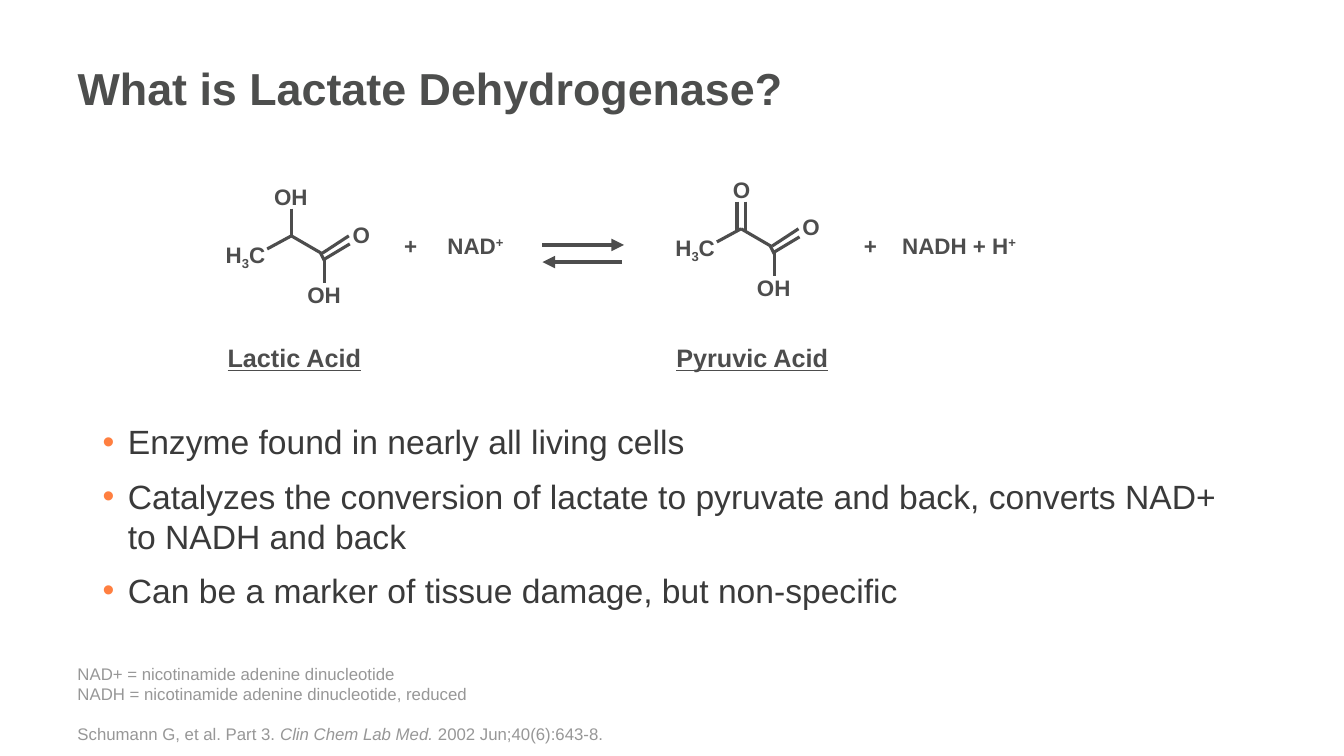
from dataclasses import dataclass
from typing import NamedTuple

from lxml.etree import SubElement
from pptx import Presentation
from pptx.dml.color import RGBColor
from pptx.enum.shapes import MSO_CONNECTOR as Connector
from pptx.enum.text import MSO_ANCHOR as Anchor, PP_ALIGN as Align
from pptx.oxml.ns import qn
from pptx.util import Inches, Pt


@dataclass(frozen=True)
class Theme:
    font: str = "Arial"
    title: RGBColor = RGBColor(0x4D, 0x4E, 0x4D)
    chemistry: RGBColor = RGBColor(0x4D, 0x4D, 0x4D)
    body: RGBColor = RGBColor(0x3A, 0x3A, 0x3A)
    note: RGBColor = RGBColor(0x97, 0x97, 0x97)
    bullet: str = "FF7F40"
    title_size: int = 32
    body_size: int = 24
    name_size: int = 18
    atom_size: int = 16
    note_size: int = 12
    bond_width: float = 2.25
    arrow_width: float = 3


class Piece(NamedTuple):
    text: str
    baseline: int = 0
    italic: bool = False


class Label(NamedTuple):
    pieces: list[Piece]
    left: float
    top: float
    width: float


class Line(NamedTuple):
    x1: float
    y1: float
    x2: float
    y2: float


class Molecule(NamedTuple):
    """A three-carbon acid, placed by its middle carbon."""
    name: Label
    x: float
    y: float
    bonds: list[Line]
    group: Label


THEME = Theme()
ATOM_HEIGHT = 0.37
NAME_HEIGHT = 0.4

# Offsets from the middle carbon
ACID_BONDS = [
    Line(0, 0, -0.24, 0.13),
    Line(0, 0, 0.31, 0.18),
    Line(0.33, 0.23, 0.33, 0.47),
    Line(0.29, 0.17, 0.33, 0.25),
    Line(0.57, 0, 0.31, 0.17),
    Line(0.58, 0.08, 0.33, 0.23),
]
ACID_LABELS = [
    Label([Piece("H"), Piece("3", -25), Piece("C")], -0.75, 0, 0.61),
    Label([Piece("O")], 0.51, -0.2, 0.38),
    Label([Piece("OH")], 0.06, 0.4, 0.54),
]
MOLECULES = [
    Molecule(Label([Piece("Lactic Acid")], 2.15, 3.35, 1.54), 2.89, 2.34,
             [Line(0, -0.27, 0, 0)],
             Label([Piece("OH")], -0.27, -0.57, 0.54)),
    Molecule(Label([Piece("Pyruvic Acid")], 6.6, 3.35, 1.72), 7.35, 2.27,
             [Line(x, -0.27, x, 0.03) for x in (-0.04, 0.04)],
             Label([Piece("O")], -0.18, -0.57, 0.38)),
]
COFACTORS = [
    Label([Piece("+")], 3.91, 2.25, 0.33),
    Label([Piece("NAD"), Piece("+", 30)], 4.34, 2.25, 0.77),
    Label([Piece("+")], 8.47, 2.25, 0.33),
    Label([Piece("NADH + H"), Piece("+", 30)], 8.85, 2.25, 1.33),
]
ARROWS = [Line(5.38, 2.43, 6.19, 2.43), Line(6.17, 2.6, 5.38, 2.6)]
BULLETS = [
    "Enzyme found in nearly all living cells",
    "Catalyzes the conversion of lactate to pyruvate and back, "
    "converts NAD+ to NADH and back",
    "Can be a marker of tissue damage, but non-specific",
]
NOTES = [
    [Piece("NAD+ = nicotinamide adenine dinucleotide")],
    [Piece("NADH = nicotinamide adenine dinucleotide, reduced")],
    [Piece("Schumann G, et al. Part 3. "),
     Piece("Clin Chem Lab Med. ", italic=True),
     Piece("2002 Jun;40(6):643-8.")],
]


def style(font, size: float, color: RGBColor, bold: bool = False) -> None:
    font.name, font.size, font.bold = THEME.font, Pt(size), bold
    font.color.rgb = color


def add_box(slide, left: float, top: float, width: float, height: float,
            wrap: bool = True):
    box = slide.shapes.add_textbox(*map(Inches, (left, top, width, height)))
    box.text_frame.word_wrap = wrap
    return box.text_frame


def paragraph_at(frame, index: int):
    return frame.add_paragraph() if index else frame.paragraphs[0]


def add_pieces(paragraph, pieces: list[Piece], size: float, color: RGBColor,
               bold: bool = False) -> None:
    for piece in pieces:
        run = paragraph.add_run()
        run.text = piece.text
        style(run.font, size, color, bold)
        if piece.italic:
            run.font.italic = True
        if piece.baseline:
            run._r.get_or_add_rPr().set("baseline", str(piece.baseline * 1000))


def add_label(slide, label: Label, x: float = 0, y: float = 0) -> None:
    frame = add_box(slide, x + label.left, y + label.top, label.width,
                    ATOM_HEIGHT, wrap=False)
    add_pieces(frame.paragraphs[0], label.pieces, THEME.atom_size,
               THEME.chemistry, bold=True)


def add_line(slide, line: Line, width: float, x: float = 0, y: float = 0,
             arrow: bool = False) -> None:
    connector = slide.shapes.add_connector(
        Connector.STRAIGHT, Inches(x + line.x1), Inches(y + line.y1),
        Inches(x + line.x2), Inches(y + line.y2))
    connector.line.color.rgb = THEME.chemistry
    connector.line.width = Pt(width)
    if arrow:
        SubElement(connector.line._get_or_add_ln(), qn("a:tailEnd"), type="triangle")
    SubElement(connector._element.spPr, qn("a:effectLst"))


def add_molecule(slide, molecule: Molecule) -> None:
    for bond in molecule.bonds + ACID_BONDS:
        add_line(slide, bond, THEME.bond_width, molecule.x, molecule.y)
    for label in [molecule.group] + ACID_LABELS:
        add_label(slide, label, molecule.x, molecule.y)
    name = molecule.name
    frame = add_box(slide, name.left, name.top, name.width, NAME_HEIGHT, wrap=False)
    paragraph = frame.paragraphs[0]
    paragraph.alignment = Align.CENTER
    add_pieces(paragraph, name.pieces, THEME.name_size, THEME.chemistry, bold=True)
    paragraph.runs[0].font.underline = True


def add_title(slide) -> None:
    title = slide.shapes.title
    title.left, title.top = Inches(0.67), Inches(0.22)
    title.width, title.height = Inches(11.75), Inches(1.3)
    frame = title.text_frame
    frame.text = "What is Lactate Dehydrogenase?"
    frame.vertical_anchor = Anchor.MIDDLE
    frame.paragraphs[0].alignment = Align.LEFT
    style(frame.paragraphs[0].runs[0].font, THEME.title_size, THEME.title, bold=True)


def add_bullets(slide) -> None:
    frame = add_box(slide, 0.92, 4.13, 11.5, 2.25)
    for index, text in enumerate(BULLETS):
        paragraph = paragraph_at(frame, index)
        paragraph.text = text
        properties = paragraph._p.get_or_add_pPr()
        properties.set("marL", str(Inches(0.25)))
        properties.set("indent", str(Inches(-0.25)))
        if index:
            paragraph.space_before = Pt(10)
        color = SubElement(properties, qn("a:buClr"))
        SubElement(color, qn("a:srgbClr"), val=THEME.bullet)
        SubElement(properties, qn("a:buFont"), typeface=THEME.font)
        SubElement(properties, qn("a:buChar"), char="•")
        style(paragraph.runs[0].font, THEME.body_size, THEME.body)


def add_notes(slide) -> None:
    frame = add_box(slide, 0.67, 6.95, 11.75, 0.48)
    frame.vertical_anchor = Anchor.BOTTOM
    for index, pieces in enumerate(NOTES):
        paragraph = paragraph_at(frame, index)
        add_pieces(paragraph, pieces, THEME.note_size, THEME.note)
    paragraph.space_before = Pt(14)


def main() -> None:
    presentation = Presentation()
    presentation.slide_width, presentation.slide_height = Inches(13.33), Inches(7.5)
    slide = presentation.slides.add_slide(presentation.slide_layouts[5])
    add_title(slide)
    add_bullets(slide)
    for molecule in MOLECULES:
        add_molecule(slide, molecule)
    for cofactor in COFACTORS:
        add_label(slide, cofactor)
    for arrow in ARROWS:
        add_line(slide, arrow, THEME.arrow_width, arrow=True)
    add_notes(slide)
    presentation.save("out.pptx")


if __name__ == "__main__":
    main()
